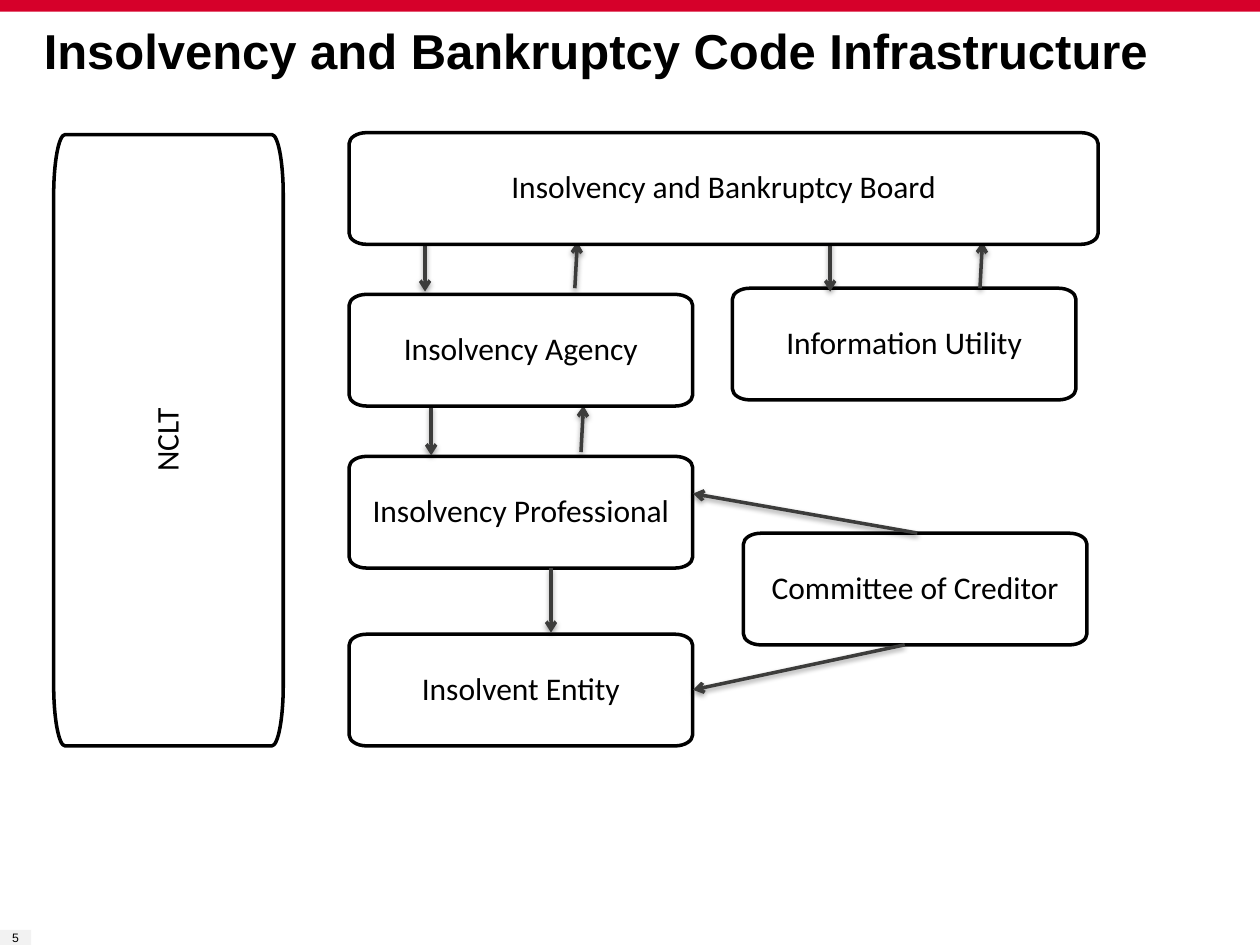
from dataclasses import dataclass

from lxml.etree import SubElement
from pptx import Presentation
from pptx.dml.color import RGBColor
from pptx.enum.shapes import MSO_CONNECTOR, MSO_SHAPE
from pptx.enum.text import MSO_ANCHOR, PP_ALIGN
from pptx.oxml.ns import qn
from pptx.shapes.base import BaseShape
from pptx.slide import Slide
from pptx.text.text import TextFrame
from pptx.util import Pt

BLACK = RGBColor(0x00, 0x00, 0x00)
WHITE = RGBColor(0xFF, 0xFF, 0xFF)
RED = RGBColor(0xD6, 0x00, 0x2A)
PALE_GREY = RGBColor(0xF2, 0xF2, 0xF2)
CHARCOAL = RGBColor(0x3C, 0x3C, 0x3B)

LINE_WIDTH = 2
ROUNDNESS = 0.55
COLUMN_LEFT = 199.5
BOX_WIDTH = 196.3
BOX_HEIGHT = 63.8


@dataclass(frozen=True)
class Box:
    label: str
    left: float
    top: float
    width: float = BOX_WIDTH
    height: float = BOX_HEIGHT
    corner_x: float = 10
    corner_y: float = 6.3
    upward: bool = False


@dataclass(frozen=True)
class Arrow:
    start_x: float
    start_y: float
    end_x: float
    end_y: float


BACK_BOXES = [
    Box("NCLT", 30.7, 76.9, 131.2, 349.3, corner_x=6.5, corner_y=34.6, upward=True),
    Box("Information Utility", 418.5, 164.7),
    Box("Insolvency Professional", COLUMN_LEFT, 260.8),
    Box("Insolvent Entity", COLUMN_LEFT, 362.4),
    Box("Committee of Creditor", 424.8, 304.7),
]
FRONT_BOXES = [
    Box("Insolvency and Bankruptcy Board", COLUMN_LEFT, 75.8, width=428),
    Box("Insolvency Agency", COLUMN_LEFT, 168.2),
]

# Top left corner of each down-and-up pair of arrows
ARROW_PAIRS = [(242.9, 138.2), (246.4, 231.8), (474.4, 138.2)]
SINGLE_ARROWS = [
    Arrow(314.9, 324.8, 314.9, 361.5),
    Arrow(524.2, 304.6, 396, 282.1),
    Arrow(517, 368.5, 396, 394.2),
]


def write_text(frame: TextFrame, text: str, *, size: float, font: str,
               bold: bool = False, align: PP_ALIGN = PP_ALIGN.CENTER,
               anchor: MSO_ANCHOR = MSO_ANCHOR.TOP, spacing: float = 1.0,
               margin: float = 0) -> None:
    frame.word_wrap = True
    frame.vertical_anchor = anchor
    frame.margin_left = frame.margin_right = Pt(margin)
    frame.margin_top = frame.margin_bottom = Pt(margin)
    paragraph = frame.paragraphs[0]
    paragraph.alignment = align
    paragraph.line_spacing = spacing
    run = paragraph.add_run()
    run.text = text
    run.font.size = Pt(size)
    run.font.name = font
    run.font.bold = bold
    run.font.color.rgb = BLACK


def fill_plain(shape: BaseShape, color: RGBColor) -> None:
    shape.shadow.inherit = False
    shape.fill.solid()
    shape.fill.fore_color.rgb = color


def add_bar(slide: Slide, left: float, top: float, width: float,
            height: float, color: RGBColor) -> BaseShape:
    bar = slide.shapes.add_shape(
        MSO_SHAPE.RECTANGLE, Pt(left), Pt(top), Pt(width), Pt(height))
    fill_plain(bar, color)
    bar.line.fill.background()
    return bar


def box_outline(box: Box) -> list[tuple[int, int]]:
    """Ends of the four sides, clockwise from the top of the left side."""
    right, bottom = box.left + box.width, box.top + box.height
    near_x, far_x = box.left + box.corner_x, right - box.corner_x
    near_y, far_y = box.top + box.corner_y, bottom - box.corner_y
    ends = [(box.left, near_y), (near_x, box.top), (far_x, box.top),
            (right, near_y), (right, far_y), (far_x, bottom),
            (near_x, bottom), (box.left, far_y), (box.left, near_y)]
    return [(Pt(x), Pt(y)) for x, y in ends]


def round_corners(shape: BaseShape) -> None:
    """Turn every other segment of a box outline into a quarter ellipse."""
    points = list(shape._element.iter(qn("a:pt")))
    ends = [(int(point.get("x")), int(point.get("y"))) for point in points]
    for index in range(1, len(ends), 2):
        (start_x, start_y), (end_x, end_y) = ends[index - 1], ends[index]
        steep = index % 4 == 1
        corner_x, corner_y = (start_x, end_y) if steep else (end_x, start_y)
        segment = points[index].getparent()
        segment.tag = qn("a:cubicBezTo")
        for x, y in ((start_x, start_y), (end_x, end_y)):
            control = SubElement(segment, qn("a:pt"),
                                 x=str(round(x + ROUNDNESS * (corner_x - x))),
                                 y=str(round(y + ROUNDNESS * (corner_y - y))))
            points[index].addprevious(control)


def add_box(slide: Slide, box: Box) -> None:
    first, *rest = box_outline(box)
    builder = slide.shapes.build_freeform(*first)
    builder.add_line_segments(rest, close=True)
    shape = builder.convert_to_shape()
    round_corners(shape)
    fill_plain(shape, WHITE)
    shape.line.color.rgb = BLACK
    shape.line.width = Pt(LINE_WIDTH)
    write_text(shape.text_frame, box.label, size=18, font="Calibri",
               anchor=MSO_ANCHOR.MIDDLE, spacing=0.9, margin=3)
    if box.upward:
        shape.text_frame._txBody.bodyPr.set("vert", "vert270")


def add_arrow(slide: Slide, arrow: Arrow) -> None:
    connector = slide.shapes.add_connector(
        MSO_CONNECTOR.STRAIGHT, Pt(arrow.start_x), Pt(arrow.start_y),
        Pt(arrow.end_x), Pt(arrow.end_y))
    connector.line.color.rgb = CHARCOAL
    connector.line.width = Pt(LINE_WIDTH)
    properties = connector._element.spPr
    SubElement(properties.find(qn("a:ln")), qn("a:tailEnd"), type="arrow")
    effects = SubElement(properties, qn("a:effectLst"))
    shadow = SubElement(effects, qn("a:outerShdw"), blurRad=str(Pt(3.1)),
                        dist=str(Pt(1.6)), dir="5400000", rotWithShape="0")
    color = SubElement(shadow, qn("a:srgbClr"), val=str(BLACK))
    SubElement(color, qn("a:alpha"), val="38000")


def add_arrow_pair(slide: Slide, left: float, top: float) -> None:
    add_arrow(slide, Arrow(left, top, left, top + 28.4))
    add_arrow(slide, Arrow(left + 85.6, top + 26.5, left + 87, top))


def main() -> None:
    presentation = Presentation()
    presentation.slide_width = Pt(720)
    presentation.slide_height = Pt(540)
    slide = presentation.slides.add_slide(presentation.slide_layouts[6])

    add_bar(slide, 0, 0, 720, 6.7, RED)
    title = slide.shapes.add_textbox(Pt(25), Pt(16.9), Pt(639.4), Pt(63.9))
    write_text(title.text_frame, "Insolvency and Bankruptcy Code Infrastructure",
               size=28, font="Arial", bold=True, align=PP_ALIGN.LEFT,
               spacing=0.85)
    page_number = add_bar(slide, 0, 531.4, 17.8, 13, PALE_GREY)
    write_text(page_number.text_frame, "5", size=7, font="Arial")

    for box in BACK_BOXES:
        add_box(slide, box)
    for left, top in ARROW_PAIRS:
        add_arrow_pair(slide, left, top)
    for arrow in SINGLE_ARROWS:
        add_arrow(slide, arrow)
    for box in FRONT_BOXES:
        add_box(slide, box)

    presentation.save("out.pptx")


if __name__ == "__main__":
    main()
